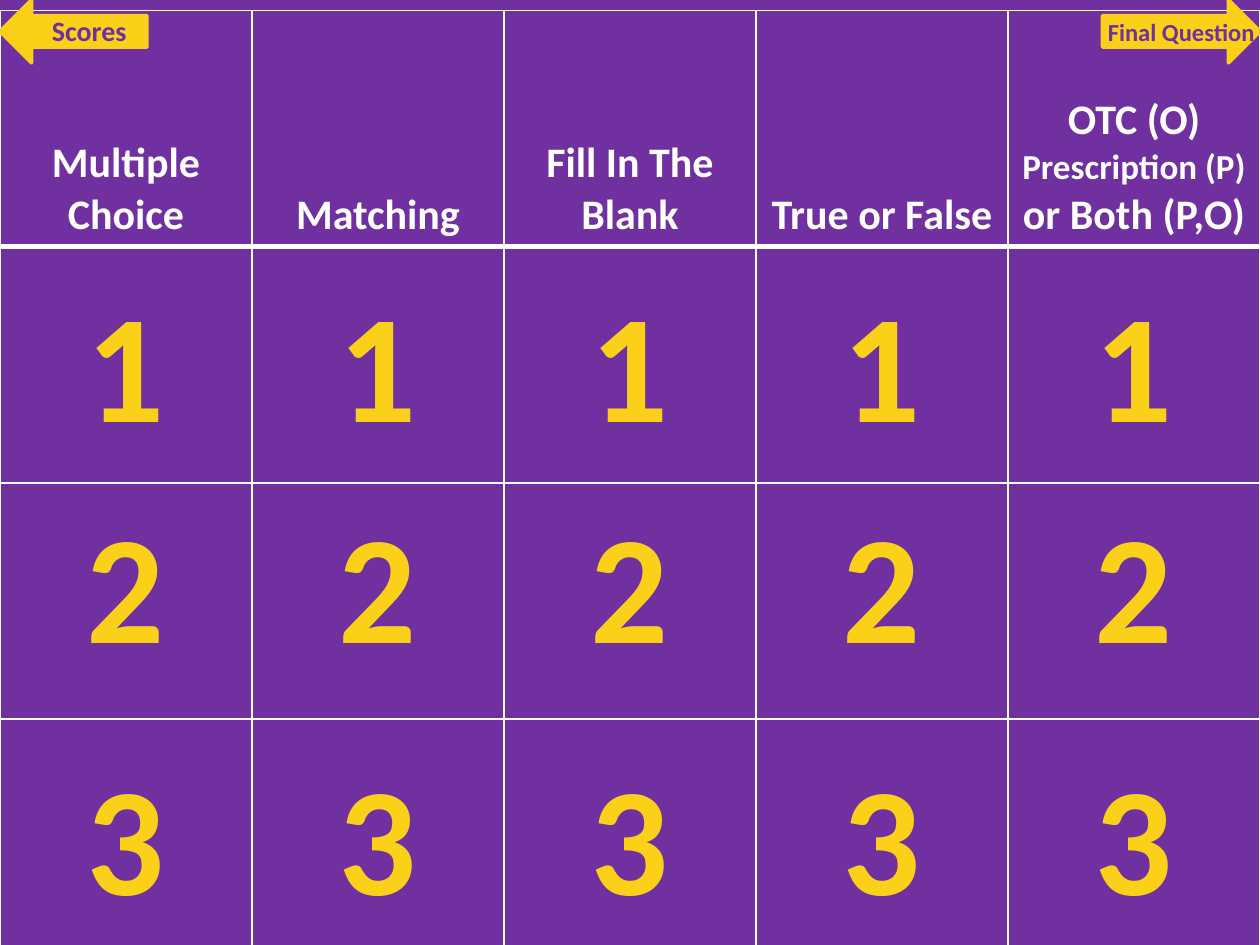
from lxml.etree import SubElement
from pptx import Presentation
from pptx.dml.color import RGBColor
from pptx.enum.shapes import MSO_SHAPE
from pptx.enum.text import MSO_ANCHOR, MSO_AUTO_SIZE, PP_ALIGN
from pptx.oxml.ns import qn
from pptx.util import Pt

CATEGORIES = [
    ["Multiple Choice"],
    ["Matching"],
    ["Fill In The Blank"],
    ["True or False"],
    ["OTC (O)", "Prescription (P)", "or Both (P,O)"],
]
SMALL_LINES = {"Prescription (P)"}
POINTS = [("1", 150), ("2", 276), ("3", 420)]  # label, top of its row
# arrow shape, its left and width, then label, its box and type size
NAV = [
    (MSO_SHAPE.LEFT_ARROW, 0, 84, "Scores", (6, 4, 90, 26), "scores"),
    (MSO_SHAPE.RIGHT_ARROW, 630, 90, "Final Question", (612, 6, 126, 24), "final"),
]
THEME = {
    "font": "Calibri", "purple": "7030A0", "gold": "FBD019", "white": "FFFFFF",
    "head": 24, "small": 20, "points": 88, "scores": 16, "final": 14,
}
WIDTH, HEIGHT = 720, 540
TABLE_TOP, ROW_H = 6, 135
COL_W = WIDTH / len(CATEGORIES)
BOX_W, BOX_H = 72, 114
ARROW_H = 36


def color(name):
    return RGBColor.from_string(THEME[name])


def style(p, size, tone):
    p.alignment = PP_ALIGN.CENTER
    f = p.font
    f.name, f.size, f.bold = THEME["font"], Pt(THEME[size]), True
    f.color.rgb = color(tone)


def fill(part, tone):
    part.fill.solid()
    part.fill.fore_color.rgb = color(tone)


def add_borders(cell, **widths):
    """Draw white borders; must run before the cell is filled."""
    tcPr = cell._tc.get_or_add_tcPr()
    for side in "LRTB":
        ln = SubElement(tcPr, qn(f"a:ln{side}"), w=str(Pt(widths.get(side, 1))))
        solid = SubElement(ln, qn("a:solidFill"))
        SubElement(solid, qn("a:srgbClr"), val=THEME["white"])


def add_label(s, text, box, size, tone):
    tf = s.shapes.add_textbox(*map(Pt, box)).text_frame
    tf.word_wrap = True
    tf.auto_size = MSO_AUTO_SIZE.SHAPE_TO_FIT_TEXT
    p = tf.paragraphs[0]
    p.text = text
    style(p, size, tone)


def add_board(s):
    rows = len(POINTS) + 1
    table = s.shapes.add_table(rows, len(CATEGORIES), 0, Pt(TABLE_TOP),
                               Pt(WIDTH), Pt(ROW_H * rows)).table
    table.horz_banding = False
    for col in table.columns:
        col.width = Pt(COL_W)
    for i, row in enumerate(table.rows):
        row.height = Pt(ROW_H)
        for cell in row.cells:
            add_borders(cell, T=3 if i == 1 else 1, B=3 if i == 0 else 1)
            fill(cell, "purple")
    for cell, lines in zip(table.rows[0].cells, CATEGORIES):
        cell.vertical_anchor = MSO_ANCHOR.BOTTOM
        cell.text = "\n".join(lines)
        for p in cell.text_frame.paragraphs:
            style(p, "small" if p.text in SMALL_LINES else "head", "white")


def add_points(s):
    for label, top in POINTS:
        for c in range(len(CATEGORIES)):
            left = c * COL_W + (COL_W - BOX_W) / 2
            add_label(s, label, (left, top, BOX_W, BOX_H), "points", "gold")


def add_nav(s):
    for kind, left, width, *_ in NAV:
        sp = s.shapes.add_shape(kind, Pt(left), 0, Pt(width), Pt(ARROW_H))
        sp.shadow.inherit = False
        fill(sp, "gold")
        sp.line.color.rgb = color("gold")
        sp.line.width = Pt(2)
    for *_, label, box, size in NAV:
        add_label(s, label, box, size, "purple")


def main():
    prs = Presentation()
    prs.slide_width, prs.slide_height = Pt(WIDTH), Pt(HEIGHT)
    s = prs.slides.add_slide(prs.slide_layouts[6])
    fill(s.background, "purple")
    add_board(s)
    add_points(s)
    add_nav(s)
    prs.save("out.pptx")


if __name__ == "__main__":
    main()
